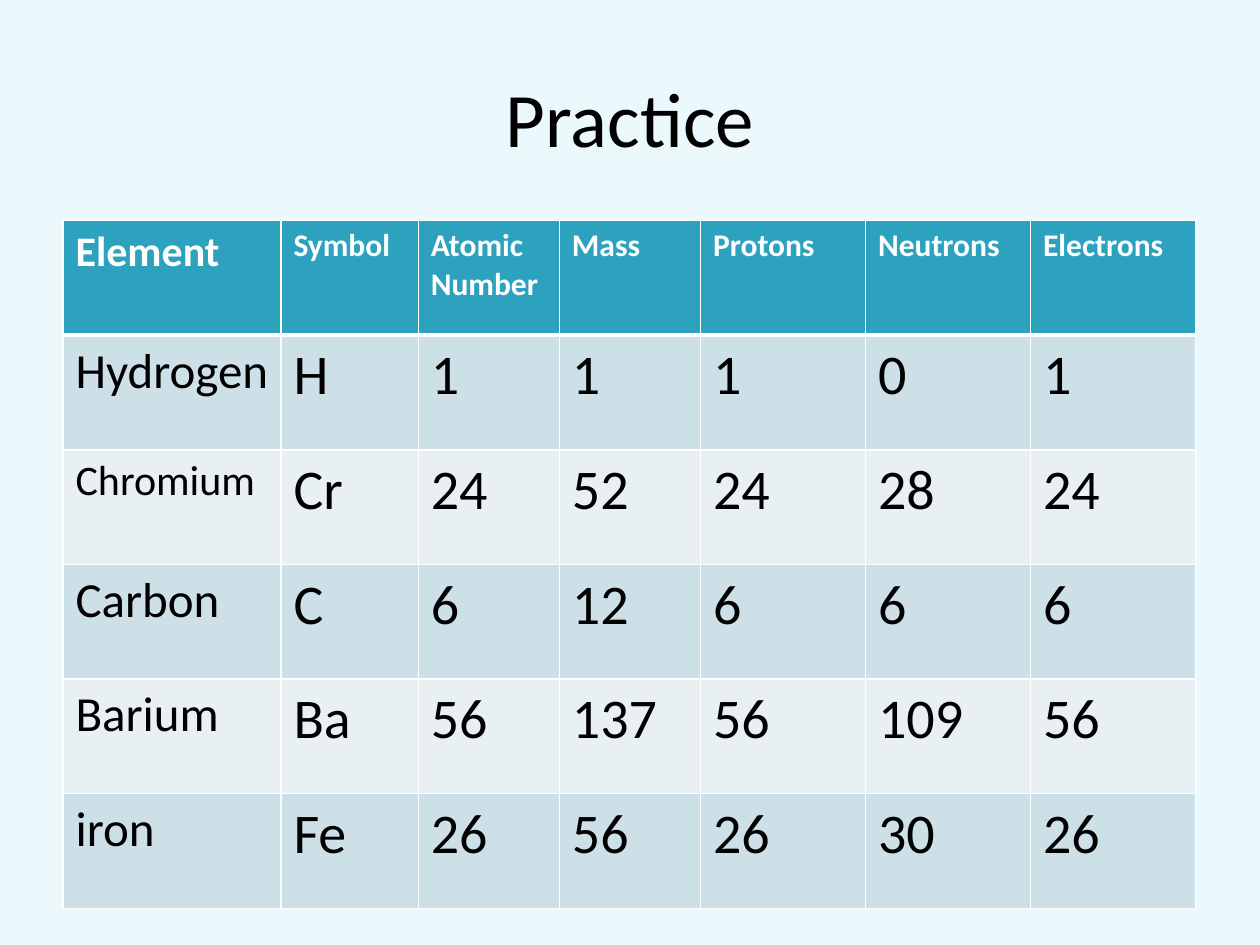
from lxml import etree
from pptx import Presentation
from pptx.dml.color import RGBColor
from pptx.enum.text import MSO_ANCHOR, PP_ALIGN
from pptx.oxml.ns import qn
from pptx.util import Inches, Pt

MIDDLE = MSO_ANCHOR.MIDDLE
CENTER = PP_ALIGN.CENTER
TITLE_ONLY_LAYOUT = 5

TITLE = "Practice"
HEADERS = ["Element", "Symbol", "Atomic Number", "Mass", "Protons", "Neutrons", "Electrons"]
ELEMENTS = [
    ("Hydrogen", "H", 1, 1, 1, 0, 1),
    ("Chromium", "Cr", 24, 52, 24, 28, 24),
    ("Carbon", "C", 6, 12, 6, 6, 6),
    ("Barium", "Ba", 56, 137, 56, 109, 56),
    ("iron", "Fe", 26, 56, 26, 30, 26),
]
COLUMN_WIDTHS = [1.73, 1.09, 1.12, 1.12, 1.31, 1.31, 1.31]
ROW_HEIGHT = 0.91
FONT = "Calibri"
COLORS = {
    "background": "EBF9FC",
    "header": "2DA2BF",
    "odd row": "CDE0E8",
    "even row": "E8F0F4",
    "border": "FFFFFF",
    "header text": "FFFFFF",
    "text": "000000",
}


def color(name):
    return RGBColor.from_string(COLORS[name])


def format_text(text_frame, size, color_name, bold=False):
    for paragraph in text_frame.paragraphs:
        for run in paragraph.runs:
            run.font.name = FONT
            run.font.size = Pt(size)
            run.font.bold = bold
            run.font.color.rgb = color(color_name)


def set_borders(cell, widths):
    """Draw cell borders; widths maps lnL, lnR, lnT and lnB to points."""
    properties = cell._tc.get_or_add_tcPr()
    for position, (side, width) in enumerate(widths.items()):
        line = etree.Element(qn(f"a:{side}"), w=str(Pt(width)))
        fill = etree.SubElement(line, qn("a:solidFill"))
        etree.SubElement(fill, qn("a:srgbClr"), val=COLORS["border"])
        properties.insert(position, line)


def text_size(row, column):
    if row == 0:
        return 24 if column == 0 else 18
    if column > 0:
        return 32
    return 24 if ELEMENTS[row - 1][0] == "Chromium" else 28


def row_color(row):
    if row == 0:
        return "header"
    return "odd row" if row % 2 else "even row"


def add_title(slide):
    title = slide.shapes.title
    title.left, title.top = Inches(0.5), Inches(0.3)
    title.width, title.height = Inches(9), Inches(1.25)
    title.text_frame.text = TITLE
    title.text_frame.vertical_anchor = MIDDLE
    title.text_frame.paragraphs[0].alignment = CENTER
    format_text(title.text_frame, 44, "text")


def add_element_table(slide):
    rows = [HEADERS, *ELEMENTS]
    table = slide.shapes.add_table(
        len(rows), len(HEADERS), Inches(0.5), Inches(1.75),
        Inches(sum(COLUMN_WIDTHS)), Inches(ROW_HEIGHT * len(rows)),
    ).table
    for column, width in zip(table.columns, COLUMN_WIDTHS):
        column.width = Inches(width)
    for row_index, values in enumerate(rows):
        table.rows[row_index].height = Inches(ROW_HEIGHT)
        is_header = row_index == 0
        borders = {"lnL": 1, "lnR": 1, "lnT": 3 if row_index == 1 else 1, "lnB": 3 if is_header else 1}
        for column_index, value in enumerate(values):
            cell = table.cell(row_index, column_index)
            cell.text_frame.text = str(value)
            format_text(cell.text_frame, text_size(row_index, column_index),
                        "header text" if is_header else "text", is_header)
            cell.fill.solid()
            cell.fill.fore_color.rgb = color(row_color(row_index))
            set_borders(cell, borders)


def main():
    presentation = Presentation()
    presentation.slide_width, presentation.slide_height = Inches(10), Inches(7.5)
    slide = presentation.slides.add_slide(presentation.slide_layouts[TITLE_ONLY_LAYOUT])
    slide.background.fill.solid()
    slide.background.fill.fore_color.rgb = color("background")
    add_title(slide)
    add_element_table(slide)
    presentation.save("out.pptx")


if __name__ == "__main__":
    main()
